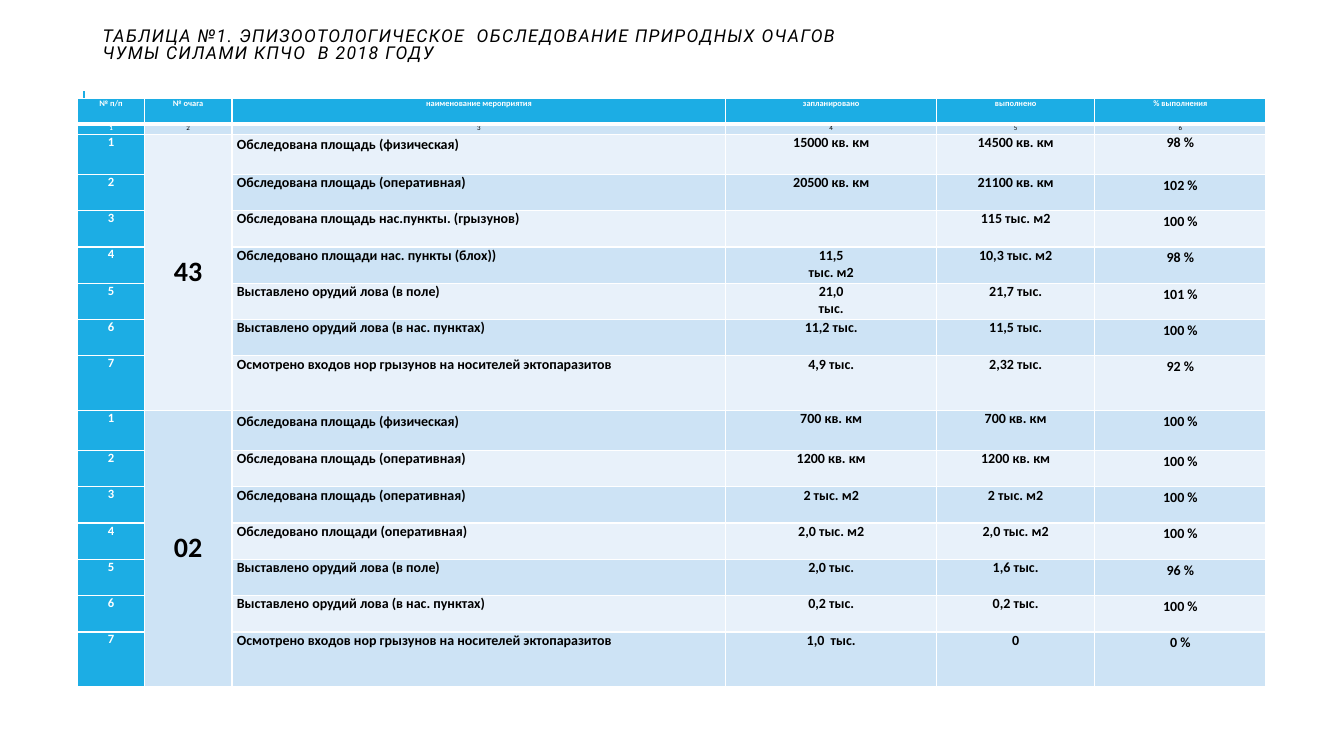
from lxml.etree import SubElement
from pptx import Presentation
from pptx.dml.color import RGBColor
from pptx.enum.shapes import MSO_CONNECTOR
from pptx.enum.text import MSO_ANCHOR, PP_ALIGN
from pptx.oxml.ns import qn
from pptx.util import Pt

COLORS = {"accent": "1CADE4", "dark_band": "CDE3F5", "light_band": "E8F1FA",
          "white": "FFFFFF", "black": "000000"}
TITLE = ("ТАБЛИЦА №1. ЭПИЗООТОЛОГИЧЕСКОЕ  ОБСЛЕДОВАНИЕ ПРИРОДНЫХ ОЧАГОВ "
         "ЧУМЫ СИЛАМИ КПЧО  В 2018 ГОДУ")
HEADERS = ["№ п/п", "№ очага", "наименование мероприятия",
           "запланировано", "выполнено", "% выполнения"]
# Focus number -> (activity, planned, done, percent)
FOCI = {
    "43": [
        ("Обследована площадь (физическая)", "15000 кв. км", "14500 кв. км", "98 %"),
        ("Обследована площадь (оперативная)", "20500 кв. км", "21100 кв. км", "102 %"),
        ("Обследована площадь нас.пункты. (грызунов)", "", "115 тыс. м2", "100 %"),
        ("Обследовано площади нас. пункты (блох))", "11,5\nтыс. м2", "10,3 тыс. м2", "98 %"),
        ("Выставлено орудий лова (в поле)", "21,0\nтыс.", "21,7 тыс.", "101 %"),
        ("Выставлено орудий лова (в нас. пунктах)", "11,2 тыс.", "11,5 тыс.", "100 %"),
        ("Осмотрено входов нор грызунов на носителей эктопаразитов",
         "4,9 тыс.", "2,32 тыс.", "92 %"),
    ],
    "02": [
        ("Обследована площадь (физическая)", "700 кв. км", "700 кв. км", "100 %"),
        ("Обследована площадь (оперативная)", "1200 кв. км", "1200 кв. км", "100 %"),
        ("Обследована площадь (оперативная)", "2 тыс. м2", "2 тыс. м2", "100 %"),
        ("Обследовано площади (оперативная)", "2,0 тыс. м2", "2,0 тыс. м2", "100 %"),
        ("Выставлено орудий лова (в поле)", "2,0 тыс.", "1,6 тыс.", "96 %"),
        ("Выставлено орудий лова (в нас. пунктах)", "0,2 тыс.", "0,2 тыс.", "100 %"),
        ("Осмотрено входов нор грызунов на носителей эктопаразитов",
         "1,0  тыс.", "0", "0 %"),
    ],
}
COLUMN_WIDTHS = [47.5, 62.6, 352.8, 150.5, 113, 122.4]
FOCUS_HEIGHTS = [28.8] + [25.92] * 5 + [38.88]
ROW_HEIGHTS = [18, 7.2] + FOCUS_HEIGHTS * len(FOCI)
TABLE_LEFT, TABLE_TOP = 55.6, 70.6


def color(name):
    return RGBColor.from_string(COLORS[name])


def write(frame, text, size, ink="black", font="Calibri", bold=False, italic=False,
          align=PP_ALIGN.CENTER, line_spacing=1.0, before=0, tracking=0):
    """Fill a text frame, one paragraph for each line of text."""
    frame.word_wrap = True
    for number, line in enumerate(text.split("\n")):
        para = frame.add_paragraph() if number else frame.paragraphs[0]
        para.alignment = align
        para.line_spacing = line_spacing
        para.space_before = Pt(before)
        if not line:
            continue
        span = para.add_run()
        span.text = line
        span.font.name, span.font.size = font, Pt(size)
        span.font.bold, span.font.italic = bold, italic
        span.font.color.rgb = color(ink)
        if tracking:
            span.font._element.set("spc", str(tracking * 100))


def style_cell(cell, fill, top=1, bottom=1):
    """Set margins, white borders (widths in points) and fill."""
    cell.margin_left = cell.margin_right = Pt(3.6)
    cell.margin_top = cell.margin_bottom = Pt(0)
    properties = cell._tc.get_or_add_tcPr()
    for side, width in (("L", 1), ("R", 1), ("T", top), ("B", bottom)):
        border = SubElement(properties, qn(f"a:ln{side}"), w=str(Pt(width)))
        solid = SubElement(border, qn("a:solidFill"))
        SubElement(solid, qn("a:srgbClr"), val=COLORS["white"])
    cell.fill.solid()
    cell.fill.fore_color.rgb = color(fill)


def fill_headings(table):
    for column, header in enumerate(HEADERS):
        heading, number = table.cell(0, column), table.cell(1, column)
        style_cell(heading, "accent", bottom=3)
        write(heading.text_frame, header, 6, "white", bold=True, before=6)
        first = column == 0
        style_cell(number, "accent" if first else "dark_band", top=3)
        write(number.text_frame, str(column + 1), 5,
              "white" if first else "black", bold=first)


def fill_focus(table, start, focus, records):
    for offset, (activity, planned, done, percent) in enumerate(records):
        row = start + offset
        band = "dark_band" if row % 2 else "light_band"
        for column in range(len(HEADERS)):
            style_cell(table.cell(row, column), band if column else "accent")
        write(table.cell(row, 0).text_frame, str(offset + 1), 9, "white", bold=True)
        write(table.cell(row, 2).text_frame, activity, 10, bold=True,
              align=PP_ALIGN.LEFT, line_spacing=1.0 if offset else 1.15)
        for column, value in ((3, planned), (4, done)):
            write(table.cell(row, column).text_frame, value, 10, bold=True)
        write(table.cell(row, 5).text_frame, percent, 10, bold=True,
              line_spacing=1.0 if row == 2 else 1.15)
    focus_cell = table.cell(start, 1)
    focus_cell.merge(table.cell(start + len(records) - 1, 1))
    focus_cell.vertical_anchor = MSO_ANCHOR.MIDDLE
    write(focus_cell.text_frame, focus, 20, bold=True)


def main():
    deck = Presentation()
    deck.slide_width, deck.slide_height = Pt(960), Pt(540)
    page = deck.slides.add_slide(deck.slide_layouts[6])

    rule = page.shapes.add_connector(MSO_CONNECTOR.STRAIGHT,
                                     Pt(60), Pt(136.8), Pt(60), Pt(64.8))
    rule.line.color.rgb, rule.line.width = color("accent"), Pt(1.5)
    SubElement(rule._element.spPr, qn("a:effectLst"))

    title = page.shapes.add_textbox(Pt(66.2), Pt(28.8), Pt(574.6), Pt(8.6))
    title.text_frame.vertical_anchor = MSO_ANCHOR.MIDDLE
    write(title.text_frame, TITLE, 12.6, font="Roboto", italic=True,
          align=PP_ALIGN.LEFT, line_spacing=0.8, tracking=1)

    table = page.shapes.add_table(
        len(ROW_HEIGHTS), len(COLUMN_WIDTHS), Pt(TABLE_LEFT), Pt(TABLE_TOP),
        Pt(sum(COLUMN_WIDTHS)), Pt(sum(ROW_HEIGHTS))).table
    table.first_row = table.horz_banding = False
    for column, width in zip(table.columns, COLUMN_WIDTHS):
        column.width = Pt(width)
    for row, height in zip(table.rows, ROW_HEIGHTS):
        row.height = Pt(height)
    fill_headings(table)
    for index, (focus, records) in enumerate(FOCI.items()):
        fill_focus(table, 2 + index * len(FOCUS_HEIGHTS), focus, records)

    deck.save("out.pptx")


if __name__ == "__main__":
    main()
